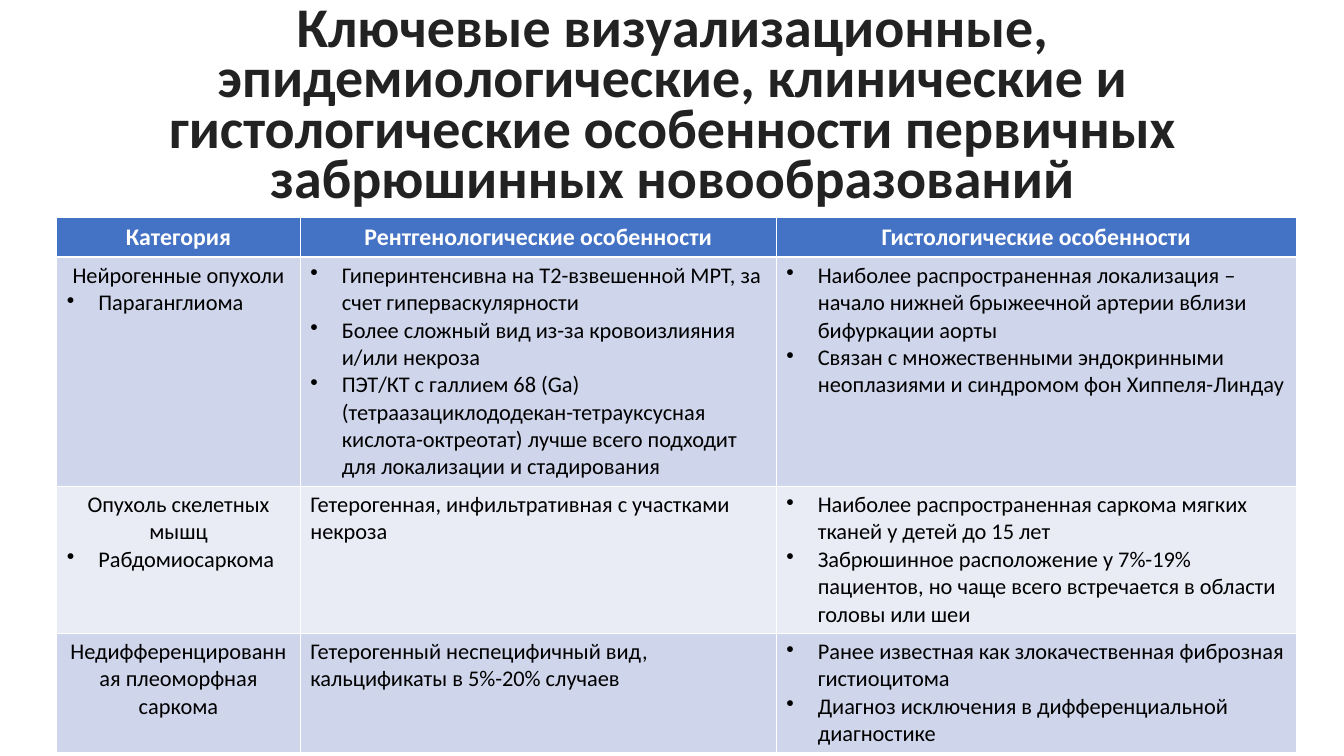
"""Build a slide with a table of primary retroperitoneal tumours."""
import pptx
import pptx.util
import pptx.dml.color
import pptx.enum.text
import pptx.oxml.ns
import lxml.etree

Pt = pptx.util.Pt
RGBColor = pptx.dml.color.RGBColor
CENTER = pptx.enum.text.PP_ALIGN.CENTER
LEFT = pptx.enum.text.PP_ALIGN.LEFT

WHITE = RGBColor(0xFF, 0xFF, 0xFF)
BLACK = RGBColor(0, 0, 0)
DARK = RGBColor(0x22, 0x22, 0x22)
BLUE = RGBColor(0x44, 0x72, 0xC4)
BANDS = [RGBColor(0xE9, 0xEB, 0xF5), RGBColor(0xCF, 0xD5, 0xEA)]

TITLE = ("Ключевые визуализационные, эпидемиологические, клинические и "
         "гистологические особенности первичных забрюшинных новообразований")
MARK = "• "
ROWS = [
    [["Категория"], ["Рентгенологические особенности"], ["Гистологические особенности"]],
    [
        ["Нейрогенные опухоли", "• Параганглиома"],
        ["• Гиперинтенсивна на Т2-взвешенной МРТ, за счет гиперваскулярности",
         "• Более сложный вид из-за кровоизлияния и/или некроза",
         "• ПЭТ/КТ с галлием 68 (Ga) (тетраазациклододекан-тетрауксусная "
         "кислота-октреотат) лучше всего подходит для локализации и стадирования"],
        ["• Наиболее распространенная локализация – начало нижней брыжеечной "
         "артерии вблизи бифуркации аорты",
         "• Связан с множественными эндокринными неоплазиями и синдромом фон Хиппеля-Линдау"],
    ],
    [
        ["Опухоль скелетных мышц", "• Рабдомиосаркома"],
        ["Гетерогенная, инфильтративная с участками некроза"],
        ["• Наиболее распространенная саркома мягких тканей у детей до 15 лет",
         "• Забрюшинное расположение у 7%-19% пациентов, но чаще всего "
         "встречается в области головы или шеи"],
    ],
    [
        ["Недифференцированная плеоморфная саркома"],
        ["Гетерогенный неспецифичный вид,", "кальцификаты в 5%-20% случаев"],
        ["• Ранее известная как злокачественная фиброзная гистиоцитома",
         "• Диагноз исключения в дифференциальной диагностике"],
    ],
]
WIDTHS = [174, 340, 371.5]
HEIGHTS = [16, 148, 83, 68.5]


def style(para, size, color, bold, align):
    """Set the font and alignment of a paragraph."""
    font = para.font
    font.name = "Calibri"
    font.size = Pt(size)
    font.bold = bold
    font.color.rgb = color
    para.alignment = align


def bullet(para):
    """Give a paragraph a hanging round bullet."""
    props = para._p.get_or_add_pPr()
    props.set("marL", str(Pt(22.5)))
    props.set("indent", str(-Pt(22.5)))
    sign = lxml.etree.Element(pptx.oxml.ns.qn("a:buChar"), char="•")
    props.insert_element_before(sign, "a:tabLst", "a:defRPr", "a:extLst")


deck = pptx.Presentation()
deck.slide_width = Pt(960)
deck.slide_height = Pt(540)
slide = deck.slides.add_slide(deck.slide_layouts[6])

table = slide.shapes.add_table(
    len(ROWS), len(WIDTHS), Pt(40.5), Pt(155.5), Pt(sum(WIDTHS)), Pt(sum(HEIGHTS))).table
for col, width in zip(table.columns, WIDTHS):
    col.width = Pt(width)
for row, height in zip(table.rows, HEIGHTS):
    row.height = Pt(height)

for r, row in enumerate(ROWS):
    head = r == 0
    for c, lines in enumerate(row):
        cell = table.cell(r, c)
        cell.fill.solid()
        cell.fill.fore_color.rgb = BLUE if head else BANDS[r % 2]
        frame = cell.text_frame
        for n, line in enumerate(lines):
            para = frame.add_paragraph() if n else frame.paragraphs[0]
            para.text = line.removeprefix(MARK)
            listed = line.startswith(MARK)
            align = CENTER if head or (c == 0 and not listed) else LEFT
            style(para, 17 if head else 16, WHITE if head else BLACK, head, align)
            if listed:
                bullet(para)

title = slide.shapes.add_textbox(Pt(37.5), Pt(0), Pt(885.5), Pt(155.5)).text_frame
title.word_wrap = True
title.vertical_anchor = pptx.enum.text.MSO_ANCHOR.MIDDLE
para = title.paragraphs[0]
para.text = TITLE
para.line_spacing = Pt(36)
style(para, 40, DARK, True, CENTER)

deck.save("out.pptx")
